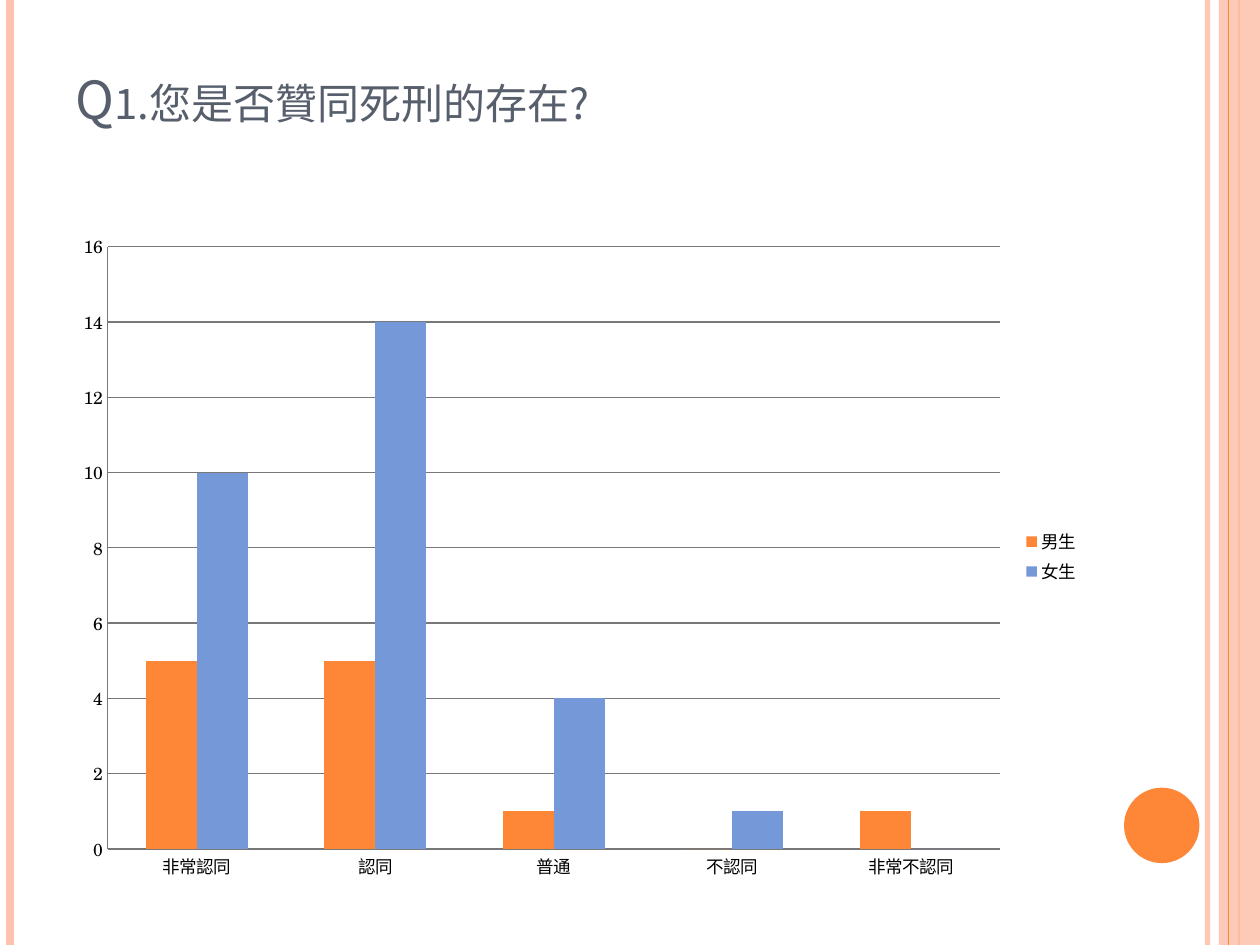
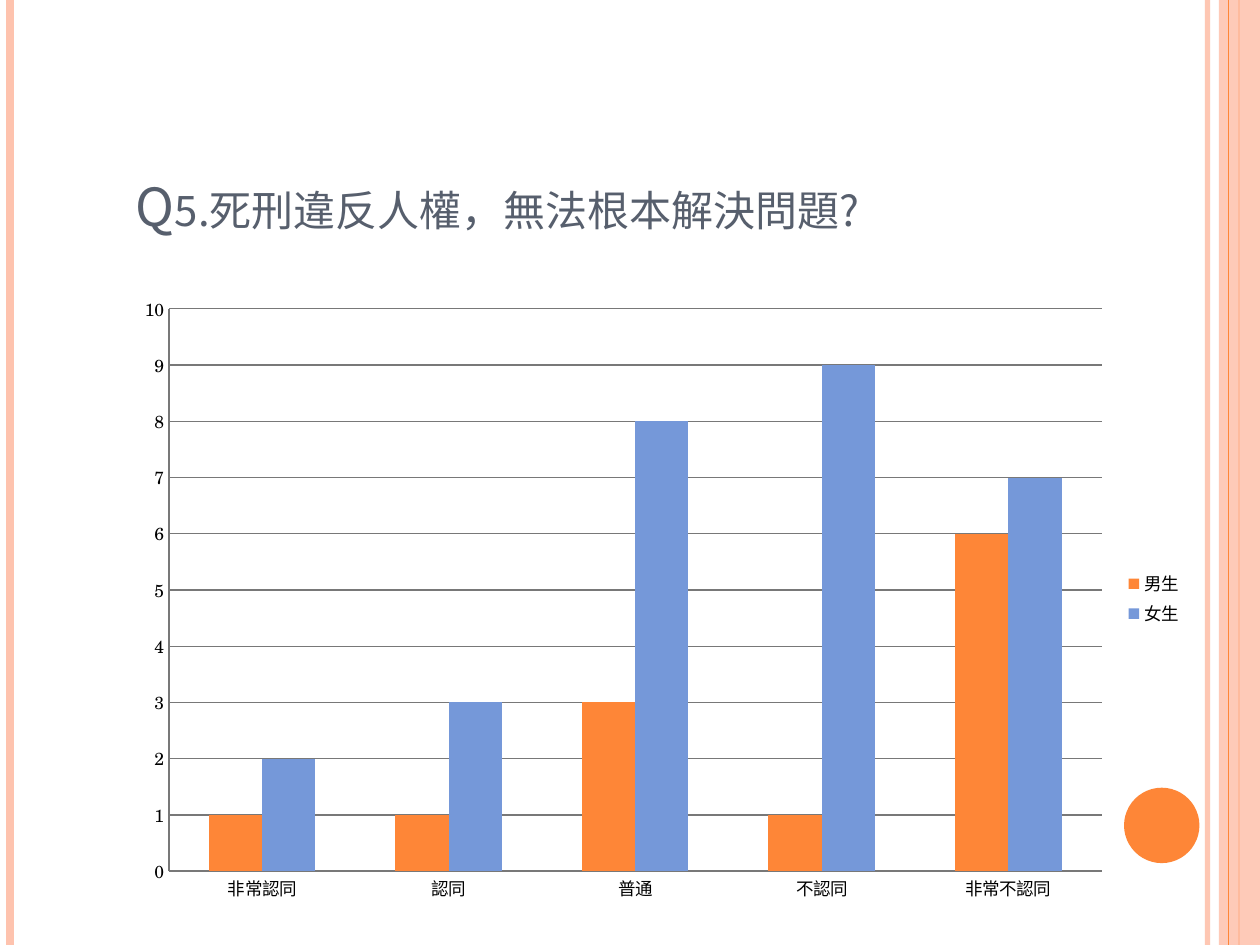
from lxml import etree
from pptx import Presentation
from pptx import util as u
from pptx.chart.data import CategoryChartData
from pptx.dml.color import RGBColor
from pptx.enum import chart as ch, shapes, text
from pptx.oxml.ns import qn

ORANGE = RGBColor(0xFE, 0x86, 0x37)
PEACH = RGBColor(0xFE, 0xC3, 0xAE)
BLUE = RGBColor(0x75, 0x98, 0xD9)
SLATE = RGBColor(0x57, 0x5F, 0x6D)
GREY = RGBColor(0x78, 0x78, 0x78)
BLACK = RGBColor(0, 0, 0)
HEADING_FONT = "Noto Sans CJK SC"
CHART_FONT = "TeX Gyre Schola"

WIDTH, HEIGHT = 25.4, 19.05
ANSWERS = ["非常認同", "認同", "普通", "不認同", "非常不認同"]
GROUP_COLOURS = {"男生": ORANGE, "女生": BLUE}

# Per question: heading, left, width, heading top, chart top, chart height,
# axis maximum, axis step, answers per group
QUESTIONS = [
    ("Q1.您是否贊同死刑的存在?", 1.27, 20.75, 0.76, 4.45, 13.54, 16, 2,
     {"男生": [5, 5, 1, 0, 1], "女生": [10, 14, 4, 1, 0]}),
    ("Q5.死刑違反人權，無法根本解決問題?", 2.49, 21.59, 2.92, 5.72, 12.7, 10, 1,
     {"男生": [1, 1, 3, 1, 6], "女生": [2, 3, 8, 9, 7]}),
]


def set_opacity(fill_parent, percent):
    colour = fill_parent.find(".//" + qn("a:srgbClr"))
    etree.SubElement(colour, qn("a:alpha")).set("val", str(percent * 1000))


def write(frame, words, *, size, colour, font, small_caps=False):
    run = frame.paragraphs[0].add_run()
    run.text = words
    run.font.size = u.Pt(size)
    run.font.color.rgb = colour
    run.font.name = font
    props = run.font._element
    etree.SubElement(props, qn("a:ea")).set("typeface", font)
    if small_caps:
        props.set("cap", "small")


class Deck:
    def __init__(self):
        self.prs = Presentation()
        self.prs.slide_width, self.prs.slide_height = u.Cm(WIDTH), u.Cm(HEIGHT)
        self.slide = None

    def new_slide(self):
        self.slide = self.prs.slides.add_slide(self.prs.slide_layouts[6])
        self.frame_edges()

    def stripe(self, x, colour, points, opacity=None):
        line = self.slide.shapes.add_connector(
            shapes.MSO_CONNECTOR.STRAIGHT, u.Cm(x), 0, u.Cm(x), u.Cm(HEIGHT))
        line.line.color.rgb = colour
        line.line.width = u.Pt(points)
        props = line._element.spPr
        if opacity:
            set_opacity(props, opacity)
        etree.SubElement(props, qn("a:effectLst"))

    def block(self, kind, left, top, width, height, colour, opacity=None):
        shape = self.slide.shapes.add_shape(
            kind, u.Cm(left), u.Cm(top), u.Cm(width), u.Cm(height))
        shape.shadow.inherit = False
        shape.fill.solid()
        shape.fill.fore_color.rgb = colour
        shape.line.fill.background()
        if opacity:
            set_opacity(shape._element.spPr, opacity)

    def frame_edges(self):
        """Stripes, right band and disc shared by all slides."""
        self.stripe(24.34, PEACH, 3, opacity=93)
        self.stripe(0.2, PEACH, 4.5)
        self.stripe(24.98, ORANGE, 1.5)
        self.block(shapes.MSO_SHAPE.RECTANGLE, 24.57, 0, 0.83, HEIGHT, PEACH, opacity=87)
        self.stripe(24.77, ORANGE, 0.75)
        self.block(shapes.MSO_SHAPE.OVAL, 22.66, 15.88, 1.52, 1.52, ORANGE)

    def heading(self, words, left, top, width):
        box = self.slide.shapes.add_textbox(
            u.Cm(left), u.Cm(top), u.Cm(width), u.Cm(3.18))
        frame = box.text_frame
        frame.word_wrap = True
        frame.vertical_anchor = text.MSO_ANCHOR.BOTTOM
        frame.margin_bottom = u.Cm(1.32)
        write(frame, words, size=30, colour=SLATE, font=HEADING_FONT, small_caps=True)

    def column_chart(self, answers, left, top, width, height, maximum, step):
        data = CategoryChartData()
        data.categories = ANSWERS
        for group, counts in answers.items():
            data.add_series(group, counts)
        chart = self.slide.shapes.add_chart(
            ch.XL_CHART_TYPE.COLUMN_CLUSTERED, u.Cm(left), u.Cm(top),
            u.Cm(width), u.Cm(height), data).chart
        chart.font.size = u.Pt(10)
        chart.font.name = CHART_FONT
        chart.font.color.rgb = BLACK
        chart.has_title = False
        chart.has_legend = True
        chart.legend.position = ch.XL_LEGEND_POSITION.RIGHT
        chart.legend.include_in_layout = False

        # Columns
        plot = chart.plots[0]
        plot.vary_by_categories = False
        plot.gap_width = 150
        for series in plot.series:
            series.format.fill.solid()
            series.format.fill.fore_color.rgb = GROUP_COLOURS[series.name]

        # Axes and gridlines
        counts_axis = chart.value_axis
        counts_axis.minimum_scale, counts_axis.maximum_scale = 0, maximum
        counts_axis.major_unit = step
        counts_axis.has_major_gridlines = True
        for axis in (chart.category_axis, counts_axis):
            axis.major_tick_mark = axis.minor_tick_mark = ch.XL_TICK_MARK.NONE
        for part in (chart.category_axis, counts_axis, counts_axis.major_gridlines):
            part.format.line.color.rgb = GREY
            part.format.line.width = u.Pt(0.75)


def main():
    deck = Deck()
    for (question, left, width, heading_top, chart_top, chart_height,
         maximum, step, answers) in QUESTIONS:
        deck.new_slide()
        deck.heading(question, left, heading_top, width)
        deck.column_chart(answers, left, chart_top, width, chart_height, maximum, step)
    deck.prs.save("out.pptx")


if __name__ == "__main__":
    main()
